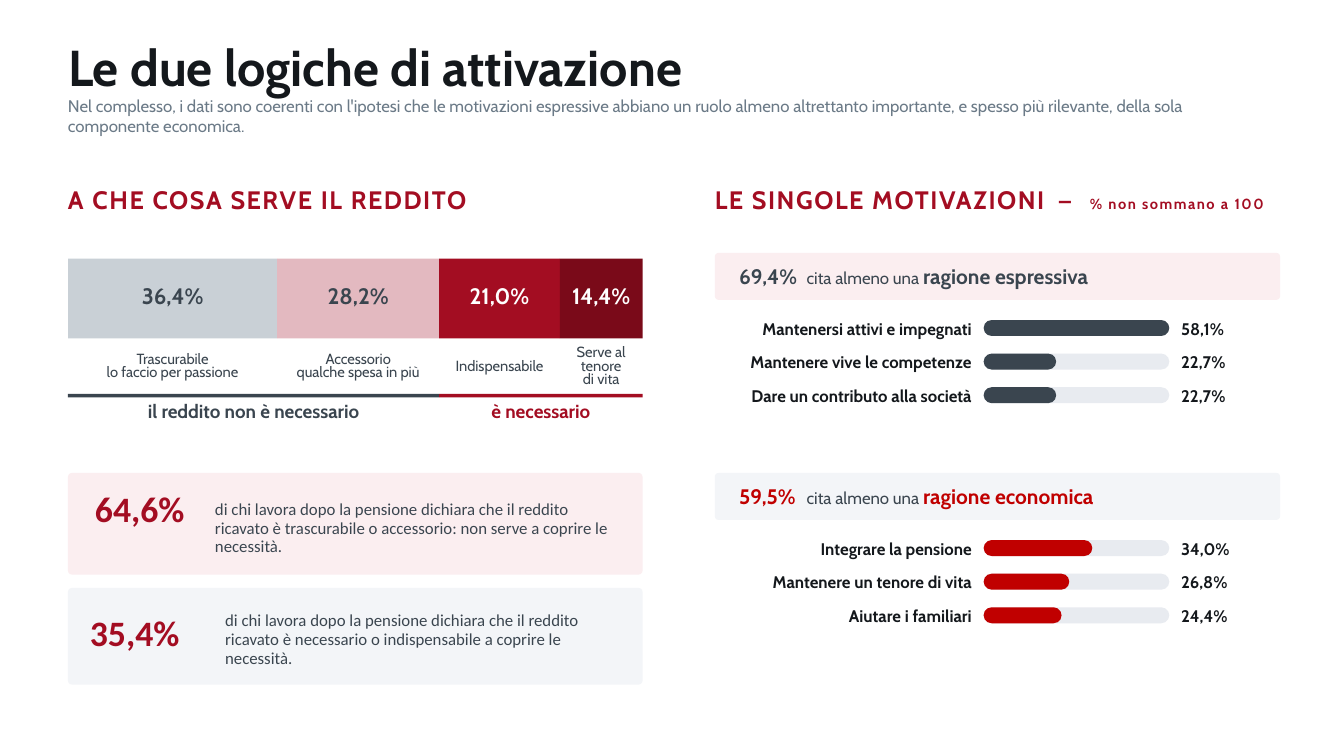
from dataclasses import dataclass

from lxml.etree import SubElement
from pptx import Presentation
from pptx.dml.color import RGBColor
from pptx.enum.shapes import MSO_SHAPE
from pptx.enum.text import MSO_ANCHOR, PP_ALIGN
from pptx.oxml.ns import qn
from pptx.util import Inches, Pt

COLUMNS, ROWS = 160, 90
LEFT, LEFT_WIDTH = 8.1, 68.4
RIGHT, RIGHT_WIDTH = 85.1, 67.3


@dataclass(frozen=True)
class Theme:
    font: str = "Cabin"
    card_font: str = "Calibri"
    ink: str = "14181C"
    slate: str = "3A454F"
    muted: str = "6B7A87"
    crimson: str = "A30D22"
    wine: str = "7A0A19"
    red: str = "C00000"
    rose: str = "E3B9C0"
    blush: str = "FBEEF0"
    silver: str = "C9D0D6"
    mist: str = "F3F5F8"
    track: str = "E8EBF0"
    white: str = "FFFFFF"
    title: float = 36
    figure: float = 25.5
    heading: float = 18
    share: float = 16
    banner: float = 15
    group: float = 13.5
    body: float = 12
    small: float = 10.5


def percent(value):
    return f"{value:.1f}%".replace(".", ",")


class SlideBuilder:
    """Places styled elements on a grid of 160 columns by 90 rows."""

    def __init__(self, deck, theme):
        self.deck, self.theme = deck, theme
        self.slide = deck.slides.add_slide(deck.slide_layouts[5])

    def place(self, x, y, width, height):
        """Turns grid units into slide lengths."""
        across = self.deck.slide_width / COLUMNS
        down = self.deck.slide_height / ROWS
        return (round(x * across), round(y * down),
                round(width * across), round(height * down))

    def set_text(self, shape, lines, size, color, bold=False, font=None,
                 align=PP_ALIGN.LEFT, leading=None, tabs=(), spacing=None, insets=(0, 0)):
        """Fills a shape; a line is a string or a list of (text, size, color, bold) spans."""
        frame = shape.text_frame
        frame.word_wrap = True
        frame.vertical_anchor = MSO_ANCHOR.MIDDLE
        frame.margin_right = frame.margin_top = 0
        frame.margin_left, frame.margin_bottom = map(Inches, insets)
        for index, line in enumerate(lines):
            para = frame.add_paragraph() if index else frame.paragraphs[0]
            para.alignment = align
            if leading:
                para.line_spacing = Pt(leading)
            if tabs:
                tab_list = SubElement(para._p.get_or_add_pPr(), qn("a:tabLst"))
                for stop in tabs:
                    SubElement(tab_list, qn("a:tab"), pos=str(Inches(stop)), algn="l")
            para.font.name = font or self.theme.font
            para.font.size, para.font.bold = Pt(size), bold
            para.font.color.rgb = RGBColor.from_string(color)
            spans = [(line, size, color, bold)] if isinstance(line, str) else line
            for text, span_size, span_color, span_bold in spans:
                span = para.add_run()
                span.text = text
                if span_size != size:
                    span.font.size = Pt(span_size)
                if span_color != color:
                    span.font.color.rgb = RGBColor.from_string(span_color)
                if span_bold != bold:
                    span.font.bold = span_bold
                if spacing:
                    span._r.get_or_add_rPr().set("spc", str(round(spacing * 100)))

    def title(self, area, text):
        shape = self.slide.shapes.title
        shape.left, shape.top, shape.width, shape.height = self.place(*area)
        self.set_text(shape, [text], self.theme.title, self.theme.ink, bold=True)

    def text(self, area, lines, size, color, **style):
        shape = self.slide.shapes.add_textbox(*self.place(*area))
        self.set_text(shape, lines, size, color, **style)

    def box(self, area, fill, radius=0):
        kind = MSO_SHAPE.ROUNDED_RECTANGLE if radius else MSO_SHAPE.RECTANGLE
        shape = self.slide.shapes.add_shape(kind, *self.place(*area))
        if radius:
            shape.adjustments[0] = radius / min(area[2:])
        shape.shadow.inherit = False
        shape.fill.solid()
        shape.fill.fore_color.rgb = RGBColor.from_string(fill)
        shape.line.fill.background()
        return shape

    def heading(self, x, width, spans, tabs=()):
        self.text((x, 20.7, width, 6), [spans], self.theme.heading, self.theme.crimson,
                  bold=True, tabs=tabs, spacing=1.1)

    def income_bar(self, segments):
        theme, x = self.theme, LEFT
        for value, fill, color, label in segments:
            width = LEFT_WIDTH * value / 100
            segment = self.box((x, 30.8, width, 9.5), fill)
            self.set_text(segment, [percent(value)], theme.share, color, bold=True,
                          align=PP_ALIGN.CENTER, insets=(0, 0.06))
            self.text((x, 41, width, 5.4), label, theme.small, theme.slate,
                      align=PP_ALIGN.CENTER, leading=9.8)
            x += width

    def income_groups(self, groups):
        x = LEFT
        for value, color, label in groups:
            width = LEFT_WIDTH * value / 100
            self.box((x, 46.9, width, 0.4), color)
            self.text((x, 47.6, width, 2.7), [label], self.theme.group, color,
                      bold=True, align=PP_ALIGN.CENTER)
            x += width

    def card(self, top, height, fill, value, figure_at, message, message_area):
        theme = self.theme
        self.box((LEFT, top, LEFT_WIDTH, height), fill, radius=0.45)
        self.text((*figure_at, 14, 5.5), [percent(value)], theme.figure, theme.crimson,
                  bold=True, font=theme.card_font)
        self.text(message_area, [message], theme.body, theme.slate,
                  font=theme.card_font, leading=13.5)

    def reasons(self, top, fill, color, total, reason, bars, longest):
        theme = self.theme
        banner = self.box((RIGHT, top, RIGHT_WIDTH, 5.6), fill, radius=0.45)
        self.set_text(banner, [[(percent(total) + "\t", theme.banner, color, True),
                                ("cita almeno una ", theme.body, theme.slate, False),
                                (reason, theme.banner, color, True)]],
                      theme.banner, color, bold=True, tabs=(0.67,), insets=(0.23, 0))
        bar_x, bar_width, bar_height = 117.1, 22.1, 1.9
        for index, (label, value) in enumerate(bars):
            y = top + 7 + 4 * index
            self.text((RIGHT, y, 30.6, 4), [label], theme.body, theme.ink,
                      bold=True, align=PP_ALIGN.RIGHT)
            if value < longest:
                self.box((bar_x, y + 1, bar_width, bar_height), theme.track, bar_height / 2)
            self.box((bar_x, y + 1, bar_width * value / longest, bar_height),
                     color, bar_height / 2)
            self.text((140.6, y, 6.8, 4), [percent(value)], theme.body, theme.ink, bold=True)


def main():
    deck = Presentation()
    deck.slide_width, deck.slide_height = Inches(13.33), Inches(7.5)
    theme = Theme()
    page = SlideBuilder(deck, theme)

    page.title((LEFT, 4.6, 144, 6.5), "Le due logiche di attivazione")
    page.text((LEFT, 11.9, 144, 3.7), [
        "Nel complesso, i dati sono coerenti con l'ipotesi che le motivazioni espressive "
        "abbiano un ruolo almeno altrettanto importante, e spesso più rilevante, della sola "
        "componente economica."], theme.body, theme.muted)

    page.heading(LEFT, LEFT_WIDTH, "A CHE COSA SERVE IL REDDITO")
    page.income_bar([
        (36.4, theme.silver, theme.slate, ["Trascurabile", "lo faccio per passione"]),
        (28.2, theme.rose, theme.slate, ["Accessorio", "qualche spesa in più"]),
        (21.0, theme.crimson, theme.white, ["Indispensabile"]),
        (14.4, theme.wine, theme.white, ["Serve al tenore", "di vita"])])
    page.income_groups([(64.6, theme.slate, "il reddito non è necessario"),
                        (35.4, theme.crimson, "è necessario")])
    page.card(56.3, 12.1, theme.blush, 64.6, (11.3, 57.7),
              "di chi lavora dopo la pensione dichiara che il reddito ricavato è trascurabile "
              "o accessorio: non serve a coprire le necessità.", (25.6, 58.7, 48.6, 8.3))
    page.card(70, 11.5, theme.mist, 35.4, (10.7, 72.5),
              "di chi lavora dopo la pensione dichiara che il reddito ricavato è necessario "
              "o indispensabile a coprire le necessità.", (26.8, 72.8, 46.2, 6.7))

    page.heading(RIGHT, RIGHT_WIDTH, [
        ("LE SINGOLE MOTIVAZIONI\t—\t", theme.heading, theme.crimson, True),
        ("% non sommano a 100", theme.small, theme.crimson, True)], tabs=(3.4, 3.72))
    expressive = [("Mantenersi attivi e impegnati", 58.1),
                  ("Mantenere vive le competenze", 22.7),
                  ("Dare un contributo alla società", 22.7)]
    economic = [("Integrare la pensione", 34.0),
                ("Mantenere un tenore di vita", 26.8),
                ("Aiutare i familiari", 24.4)]
    longest = max(value for _, value in expressive + economic)
    page.reasons(30.1, theme.blush, theme.slate, 69.4, "ragione espressiva",
                 expressive, longest)
    page.reasons(56.3, theme.mist, theme.red, 59.5, "ragione economica",
                 economic, longest)
    deck.save("out.pptx")


if __name__ == "__main__":
    main()
